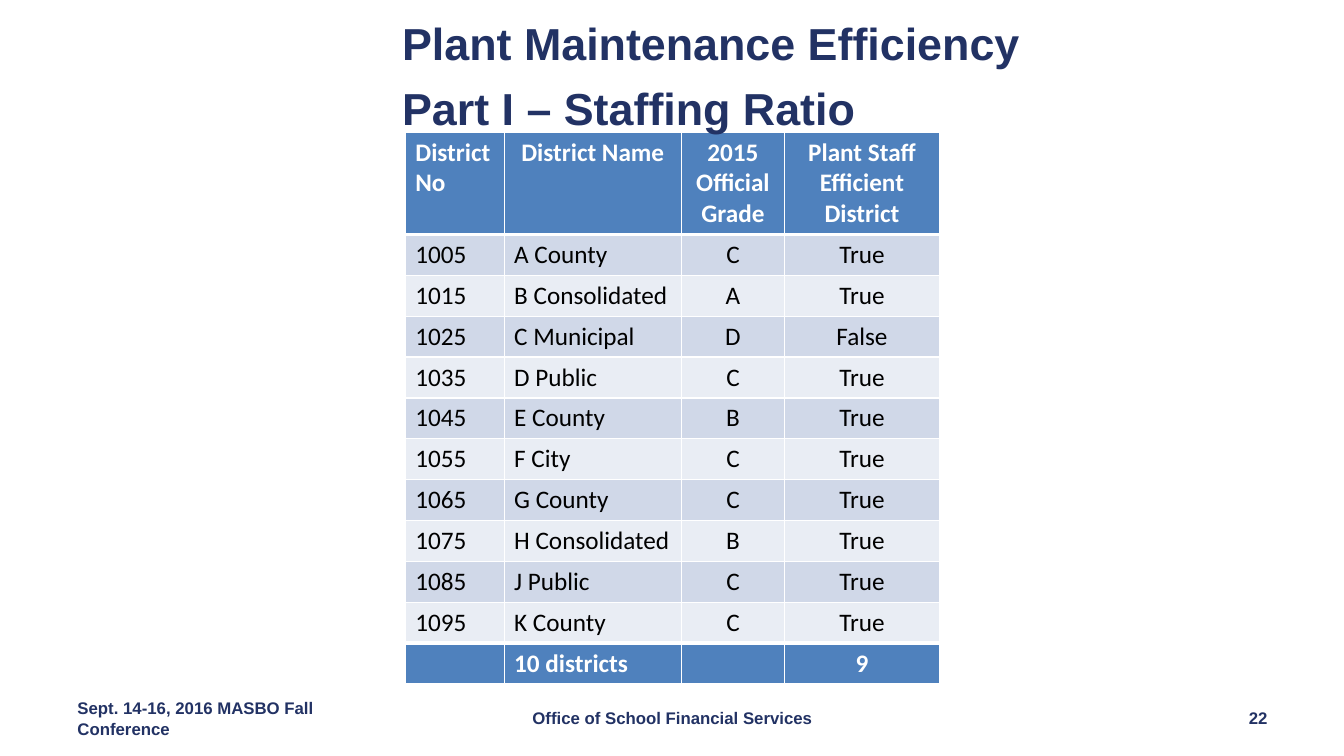
from pptx import Presentation
from pptx.dml.color import RGBColor
from pptx.enum.text import MSO_ANCHOR, PP_ALIGN
from pptx.oxml import parse_xml
from pptx.oxml.ns import nsdecls
from pptx.util import Inches, Pt

NAVY = RGBColor(0x22, 0x32, 0x64)
BLUE = RGBColor(0x4F, 0x81, 0xBD)
BAND_DARK = RGBColor(0xD0, 0xD8, 0xE8)
BAND_LIGHT = RGBColor(0xE9, 0xED, 0xF4)
WHITE = RGBColor(0xFF, 0xFF, 0xFF)
BLACK = RGBColor(0x00, 0x00, 0x00)

TITLE = ["Plant Maintenance Efficiency", "Part I – Staffing Ratio"]
HEADER = ("District No", "District Name", "2015 Official Grade",
          "Plant Staff Efficient District")
DISTRICTS = [
    ("1005", "A County", "C", "True"),
    ("1015", "B Consolidated", "A", "True"),
    ("1025", "C Municipal", "D", "False"),
    ("1035", "D Public", "C", "True"),
    ("1045", "E County", "B", "True"),
    ("1055", "F City", "C", "True"),
    ("1065", "G County", "C", "True"),
    ("1075", "H Consolidated", "B", "True"),
    ("1085", "J Public", "C", "True"),
    ("1095", "K County", "C", "True"),
]
TOTAL = ("", "10 districts", "", "9")
FOOTERS = [
    ("Sept. 14-16, 2016 MASBO Fall Conference", 0.67, 3.11, PP_ALIGN.LEFT),
    ("Office of School Financial Services", 4.56, 4.22, PP_ALIGN.CENTER),
    ("22", 9.56, 3.11, PP_ALIGN.RIGHT),
]
COLUMN_WIDTHS = (0.98, 1.76, 1.02, 1.54)
TABLE_LEFT, TABLE_TOP, TABLE_HEIGHT, HEADER_HEIGHT = 4.02, 1.31, 5.47, 1.01


def write(frame, lines, font="Arial", size=12, color=NAVY, bold=True,
          align=PP_ALIGN.LEFT, gap=0):
    frame.word_wrap = True
    for index, line in enumerate(lines):
        para = frame.paragraphs[0] if index == 0 else frame.add_paragraph()
        para.alignment = align
        if index:
            para.space_before = Pt(gap)
        para.font.size = Pt(size)
        if line:
            span = para.add_run()
            span.text = line
            span.font.name = font
            span.font.size = Pt(size)
            span.font.bold = bold
            span.font.color.rgb = color


def set_borders(cell, top, bottom):
    properties = cell._tc.get_or_add_tcPr()
    sides = (("lnL", 1), ("lnR", 1), ("lnT", top), ("lnB", bottom))
    for position, (side, width) in enumerate(sides):
        properties.insert(position, parse_xml(
            f'<a:{side} {nsdecls("a")} w="{Pt(width)}"><a:solidFill>'
            f'<a:srgbClr val="{WHITE}"/></a:solidFill></a:{side}>'))


def add_district_table(page):
    rows = [HEADER, *DISTRICTS, TOTAL]
    last = len(rows) - 1
    table = page.shapes.add_table(
        len(rows), len(HEADER), Inches(TABLE_LEFT), Inches(TABLE_TOP),
        Inches(sum(COLUMN_WIDTHS)), Inches(TABLE_HEIGHT)).table
    for column, width in zip(table.columns, COLUMN_WIDTHS):
        column.width = Inches(width)
    for r, values in enumerate(rows):
        emphasis = r in (0, last)
        height = HEADER_HEIGHT if r == 0 else (TABLE_HEIGHT - HEADER_HEIGHT) / last
        table.rows[r].height = Inches(height)
        for c, value in enumerate(values):
            cell = table.cell(r, c)
            centred = c > 1 or (r == 0 and c == 1)
            write(cell.text_frame, [value], font="Calibri", size=18,
                  color=WHITE if emphasis else BLACK, bold=emphasis,
                  align=PP_ALIGN.CENTER if centred else PP_ALIGN.LEFT)
            cell.fill.solid()
            cell.fill.fore_color.rgb = (
                BLUE if emphasis else BAND_DARK if r % 2 else BAND_LIGHT)
            set_borders(cell, top=3 if r in (1, last) else 1,
                        bottom=3 if r in (0, last - 1) else 1)


def main():
    deck = Presentation()
    deck.slide_width, deck.slide_height = Inches(13.33), Inches(7.5)
    page = deck.slides.add_slide(deck.slide_layouts[6])
    add_district_table(page)

    title = page.shapes.add_textbox(
        Inches(3.89), Inches(0.06), Inches(7.99), Inches(1.26))
    title.text_frame.margin_top = Inches(0.1)
    write(title.text_frame, TITLE, size=32, gap=8)

    for text, left, width, align in FOOTERS:
        box = page.shapes.add_textbox(
            Inches(left), Inches(6.85), Inches(width), Inches(0.55))
        box.text_frame.vertical_anchor = MSO_ANCHOR.MIDDLE
        write(box.text_frame, [text], align=align)

    deck.save("out.pptx")


if __name__ == "__main__":
    main()
